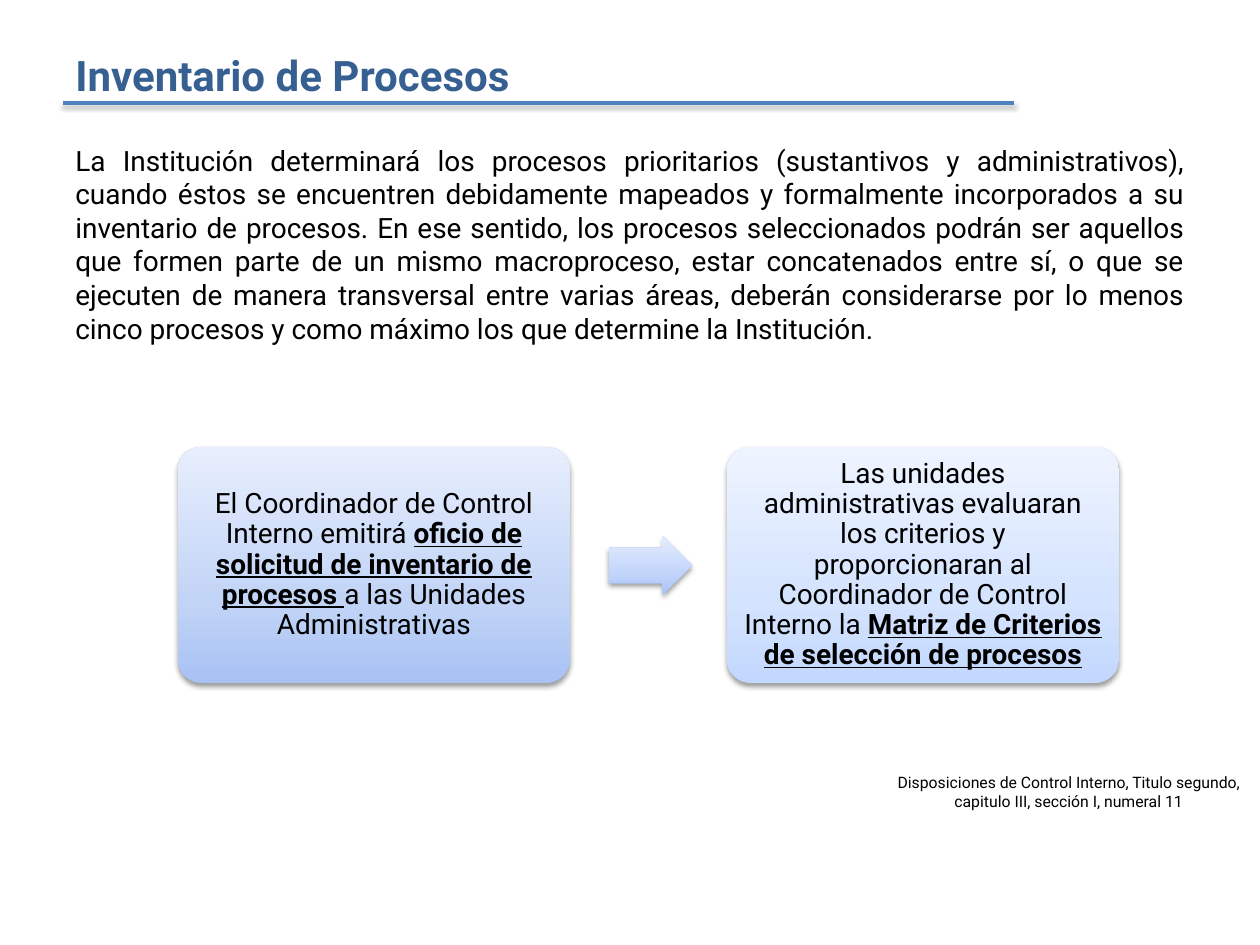
from dataclasses import dataclass

from lxml.etree import SubElement
from pptx import Presentation
from pptx.dml.color import RGBColor
from pptx.enum.shapes import MSO_CONNECTOR, MSO_SHAPE
from pptx.enum.text import MSO_ANCHOR, PP_ALIGN
from pptx.oxml.ns import qn
from pptx.util import Emu, Pt

PX_PER_INCH = 126
FONT = "Roboto"
BLACK = "000000"


@dataclass
class Box:
    x: int
    y: int
    w: int
    h: int


@dataclass
class Run:
    text: str
    bold: bool = False
    underline: bool = False


@dataclass
class Step:
    x: int
    gradient: tuple[str, str, str]
    runs: list[Run]


STEPS = [
    Step(178, ("A8C2F4", "C2D4F6", "E7EEFD"), [
        Run("El Coordinador de Control Interno emitirá "),
        Run("oficio de solicitud de inventario de procesos", True, True),
        Run(" ", False, True),
        Run("a las Unidades Administrativas"),
    ]),
    Step(727, ("C3D8FE", "D4E3FE", "EEF4FF"), [
        Run("Las unidades administrativas evaluaran los criterios y proporcionaran "
            "al Coordinador de Control Interno la "),
        Run("Matriz de Criterios de selección de procesos", True, True),
    ]),
]
BODY = (
    "La Institución determinará los procesos prioritarios (sustantivos y administrativos), "
    "cuando éstos se encuentren debidamente mapeados y formalmente incorporados a su "
    "inventario de procesos. En ese sentido, los procesos seleccionados podrán ser aquellos "
    "que formen parte de un mismo macroproceso, estar concatenados entre sí, o que se "
    "ejecuten de manera transversal entre varias áreas, deberán considerarse por lo menos "
    "cinco procesos y como máximo los que determine la Institución."
)
SOURCE = ("Disposiciones de Control Interno, Titulo segundo, "
          "capitulo III, sección I, numeral 11")


def px(n: int) -> Emu:
    return Emu(round(n * 914400 / PX_PER_INCH))


def rgb(value: str) -> RGBColor:
    return RGBColor.from_string(value)


def place(box: Box) -> tuple[Emu, ...]:
    return px(box.x), px(box.y), px(box.w), px(box.h)


def style_font(p, size: int, color: str = BLACK) -> None:
    p.font.name = FONT
    p.font.size = Pt(size)
    p.font.color.rgb = rgb(color)


def add_shadow(spPr) -> None:
    effects = spPr.find(qn("a:effectLst"))
    if effects is None:
        effects = SubElement(spPr, qn("a:effectLst"))
    shadow = SubElement(effects, qn("a:outerShdw"), blurRad=str(Pt(3.1)),
                        dist=str(Pt(1.6)), dir="5400000", rotWithShape="0")
    color = SubElement(shadow, qn("a:srgbClr"), val=BLACK)
    SubElement(color, qn("a:alpha"), val="38000")


def add_gradient(spPr, colors: tuple[str, str, str]) -> None:
    """Fill from bottom to top."""
    grad = SubElement(spPr, qn("a:gradFill"), rotWithShape="1")
    stops = SubElement(grad, qn("a:gsLst"))
    for percent, color in zip((0, 35, 100), colors):
        stop = SubElement(stops, qn("a:gs"), pos=str(percent * 1000))
        SubElement(stop, qn("a:srgbClr"), val=color)
    SubElement(grad, qn("a:lin"), ang=str(270 * 60000), scaled="0")


def add_gradient_shape(s, kind: MSO_SHAPE, box: Box, adjustments: tuple[float, ...],
                       colors: tuple[str, str, str]):
    sp = s.shapes.add_shape(kind, *place(box))
    for i, value in enumerate(adjustments):
        sp.adjustments[i] = value
    add_gradient(sp._element.spPr, colors)
    sp.line.fill.background()
    sp.shadow.inherit = False
    add_shadow(sp._element.spPr)
    return sp


def add_text(s, box: Box, text: str, size: int, color: str = BLACK,
             align: PP_ALIGN = PP_ALIGN.LEFT, anchor: MSO_ANCHOR = MSO_ANCHOR.TOP,
             bold: bool = False) -> None:
    tf = s.shapes.add_textbox(*place(box)).text_frame
    tf.word_wrap = True
    tf.vertical_anchor = anchor
    p = tf.paragraphs[0]
    p.text = text
    p.alignment = align
    style_font(p, size, color)
    p.font.bold = bold


def add_step(s, step: Step) -> None:
    sp = add_gradient_shape(s, MSO_SHAPE.ROUNDED_RECTANGLE, Box(step.x, 447, 392, 236),
                            (0.1,), step.gradient)
    tf = sp.text_frame
    tf.word_wrap = True
    tf.vertical_anchor = MSO_ANCHOR.MIDDLE
    tf.margin_left = tf.margin_right = tf.margin_top = tf.margin_bottom = px(9)
    p = tf.paragraphs[0]
    p.alignment = PP_ALIGN.CENTER
    p.line_spacing = 0.9
    style_font(p, 16)
    for run in step.runs:
        r = p.add_run()
        r.text = run.text
        r.font.bold = run.bold
        r.font.underline = run.underline


def add_title_rule(s) -> None:
    line = s.shapes.add_connector(MSO_CONNECTOR.STRAIGHT, px(63), px(103), px(1014), px(103))
    line.line.color.rgb = rgb("4F81BD")
    line.line.width = Pt(2)
    add_shadow(line._element.spPr)


def main() -> None:
    prs = Presentation()
    prs.slide_width, prs.slide_height = px(1260), px(945)
    s = prs.slides.add_slide(prs.slide_layouts[6])

    add_text(s, Box(63, 137, 1134, 624), BODY, 16, align=PP_ALIGN.JUSTIFY)
    add_text(s, Box(63, 38, 1134, 73), "Inventario de Procesos", 24, "376092",
             anchor=MSO_ANCHOR.MIDDLE, bold=True)
    add_title_rule(s)
    for step in STEPS:
        add_step(s, step)
    add_gradient_shape(s, MSO_SHAPE.RIGHT_ARROW, Box(609, 536, 83, 59), (0.6, 0.5),
                       ("A5C3FA", "C1D4FA", "E6EEFE"))
    add_text(s, Box(877, 767, 383, 50), SOURCE, 9, align=PP_ALIGN.CENTER)

    prs.save("out.pptx")


if __name__ == "__main__":
    main()
